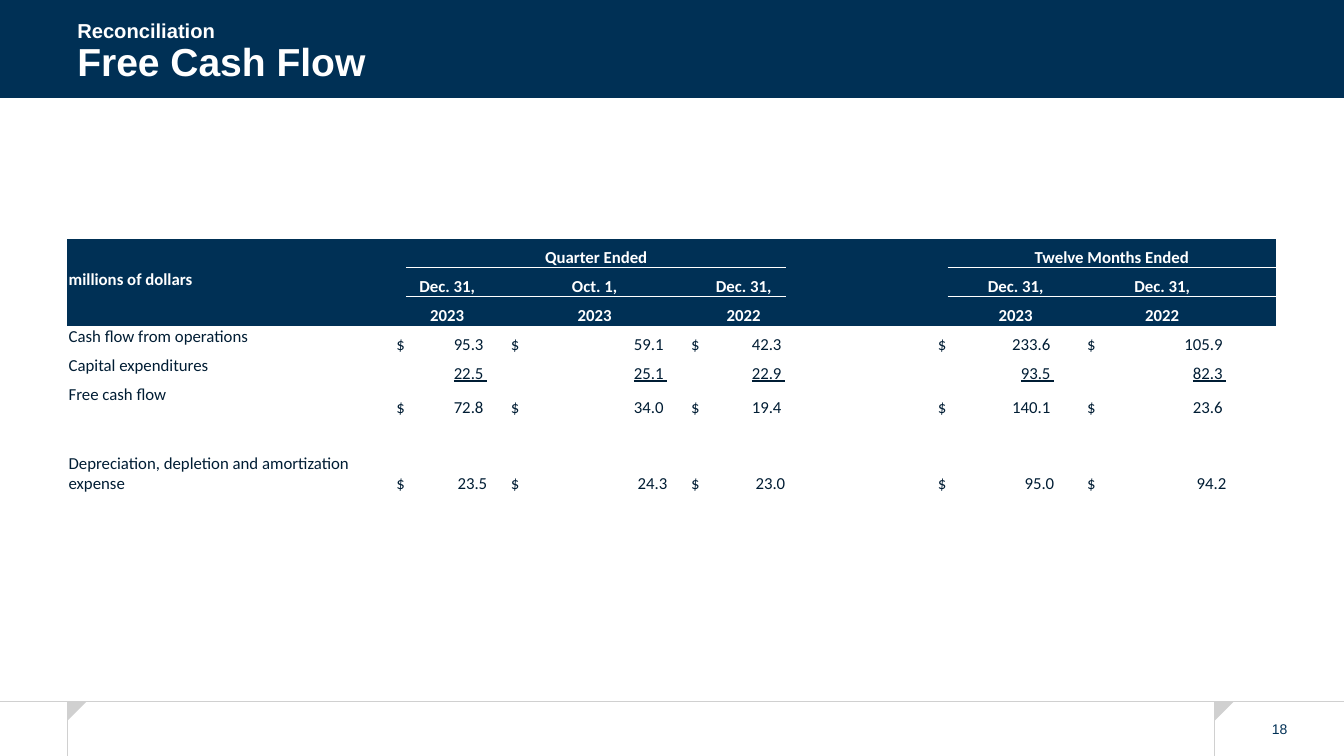
from dataclasses import dataclass

import lxml.etree
import pptx
import pptx.dml.color
import pptx.enum.shapes
import pptx.enum.text
import pptx.oxml.ns
import pptx.util

Cm = pptx.util.Cm
Pt = pptx.util.Pt
Color = pptx.dml.color.RGBColor
Align = pptx.enum.text.PP_ALIGN
Anchor = pptx.enum.text.MSO_ANCHOR
Shape = pptx.enum.shapes.MSO_SHAPE
qn = pptx.oxml.ns.qn


@dataclass(frozen=True)
class Theme:
    navy: Color = Color.from_string("003055")
    ink: Color = Color.from_string("001D34")
    white: Color = Color.from_string("FFFFFF")
    rule: Color = Color.from_string("D0D0D0")
    heading_font: str = "Arial"
    table_font: str = "Calibri"
    kicker_size: float = 14.4
    title_size: float = 27.9
    table_size: float = 12
    page_size: float = 10
    rule_width: float = 0.5
    header_rule_width: float = 1
    no_table_style: str = "{2D5ABB26-0587-4C30-8999-92F81FD0307C}"


@dataclass(frozen=True)
class Span:
    title: str
    first: int
    last: int


@dataclass(frozen=True)
class Period:
    day: str
    year: str
    dollar_column: int
    amount_column: int


@dataclass(frozen=True)
class Measure:
    row: int
    label: str
    amounts: tuple[str, ...]
    dollars: bool = True
    underlined: bool = False
    label_anchor: Anchor = Anchor.TOP


THEME = Theme()
SLIDE_WIDTH, SLIDE_HEIGHT = 33.87, 19.05
FOOTER_TOP = 17.68
FOOTER_DIVIDERS = (1.7, 30.61)
FLAG_SIZE = 0.48
HEADER_ROWS = 3
COLUMN_WIDTHS = (7.72, 0.81, 2.08, 0.81, 3.73, 0.81, 2.16,
                 2.08, 1.98, 0.71, 2.01, 1.04, 3.3, 1.22)
ROW_HEIGHTS = (0.73,) * 5 + (0.86, 0.66, 1.27)
SPANS = (Span("Quarter Ended", 2, 6), Span("Twelve Months Ended", 9, 13))
PERIODS = (
    Period("Dec. 31,", "2023", 1, 2),
    Period("Oct. 1,", "2023", 3, 4),
    Period("Dec. 31,", "2022", 5, 6),
    Period("Dec. 31,", "2023", 8, 10),
    Period("Dec. 31,", "2022", 11, 12),
)
MEASURES = (
    Measure(3, "Cash flow from operations",
            ("95.3 ", "59.1 ", "42.3 ", "233.6 ", "105.9 ")),
    Measure(4, "Capital expenditures",
            ("22.5 ", "25.1 ", "22.9 ", "93.5 ", "82.3 "),
            dollars=False, underlined=True),
    Measure(5, "Free cash flow",
            ("72.8 ", "34.0 ", "19.4 ", "140.1 ", "23.6 ")),
    Measure(7, "Depreciation, depletion and amortization expense",
            ("23.5", "24.3", "23.0", "95.0", "94.2"),
            label_anchor=Anchor.BOTTOM),
)


def style_text(paragraph, font_name: str, size: float, color: Color,
               bold: bool = False, underline: bool = False) -> None:
    for run in paragraph.runs:
        run.font.name = font_name
        run.font.size = Pt(size)
        run.font.color.rgb = color
        run.font.bold = bold
        run.font.underline = underline


def draw_solid(slide, kind: Shape, left: float, top: float, width: float,
               height: float, color: Color, rotation: float = 0) -> None:
    solid = slide.shapes.add_shape(kind, Cm(left), Cm(top), Cm(width), Cm(height))
    solid.rotation = rotation
    solid.shadow.inherit = False
    solid.fill.solid()
    solid.fill.fore_color.rgb = color
    solid.line.fill.background()


def draw_rule(slide, x1: float, y1: float, x2: float, y2: float) -> None:
    rule = slide.shapes.add_connector(
        pptx.enum.shapes.MSO_CONNECTOR.STRAIGHT, Cm(x1), Cm(y1), Cm(x2), Cm(y2))
    rule.line.color.rgb = THEME.rule
    rule.line.width = Pt(THEME.rule_width)
    lxml.etree.SubElement(rule._element.spPr, qn("a:effectLst"))


def add_text_frame(slide, left: float, top: float, width: float, height: float):
    frame = slide.shapes.add_textbox(
        Cm(left), Cm(top), Cm(width), Cm(height)).text_frame
    frame.word_wrap = True
    frame.vertical_anchor = Anchor.MIDDLE
    return frame


def draw_footer(slide) -> None:
    page = add_text_frame(slide, 31.55, 18.06, 1.4, 0.64)
    page.margin_left = page.margin_right = 0
    page.text = "18"
    page.paragraphs[0].alignment = Align.CENTER
    style_text(page.paragraphs[0], THEME.heading_font, THEME.page_size, THEME.navy)
    draw_rule(slide, 0, FOOTER_TOP, SLIDE_WIDTH, FOOTER_TOP)
    for divider in FOOTER_DIVIDERS:
        draw_rule(slide, divider, FOOTER_TOP, divider, SLIDE_HEIGHT)
        draw_solid(slide, Shape.RIGHT_TRIANGLE, divider, FOOTER_TOP,
                   FLAG_SIZE, FLAG_SIZE, THEME.rule, rotation=90)


def draw_title(slide) -> None:
    draw_solid(slide, Shape.RECTANGLE, 0, 0, SLIDE_WIDTH, 2.47, THEME.navy)
    title = add_text_frame(slide, 1.7, 0.61, 28.17, 1.45)
    title.text = "Reconciliation\nFree Cash Flow"
    for paragraph, size in zip(title.paragraphs, (THEME.kicker_size, THEME.title_size)):
        paragraph.line_spacing = 0.9
        style_text(paragraph, THEME.heading_font, size, THEME.white, bold=True)


def prepare_cell(cell, header: bool) -> None:
    cell.margin_left = cell.margin_right = cell.margin_top = Cm(0.03)
    cell.margin_bottom = 0
    if header:
        cell.fill.solid()
        cell.fill.fore_color.rgb = THEME.navy
    else:
        cell.fill.background()
    ending = lxml.etree.SubElement(
        cell.text_frame.paragraphs[0]._p, qn("a:endParaRPr"))
    ending.set("sz", str(THEME.table_size * 100))


def write_cell(cell, text: str, align: Align, anchor: Anchor = Anchor.BOTTOM,
               header: bool = False, underline: bool = False) -> None:
    paragraph = cell.text_frame.paragraphs[0]
    paragraph.text = text
    paragraph.alignment = align
    cell.vertical_anchor = anchor
    style_text(paragraph, THEME.table_font, THEME.table_size,
               THEME.white if header else THEME.ink, header, underline)


def add_border(cell, side: str) -> None:
    border = lxml.etree.Element(qn(side), w=str(Pt(THEME.header_rule_width)))
    fill = lxml.etree.SubElement(border, qn("a:solidFill"))
    lxml.etree.SubElement(fill, qn("a:srgbClr"), val=str(THEME.white))
    cell._tc.get_or_add_tcPr().insert(0, border)


def draw_cash_flow_table(slide) -> None:
    table = slide.shapes.add_table(
        len(ROW_HEIGHTS), len(COLUMN_WIDTHS), Cm(1.7), Cm(6.02),
        Cm(sum(COLUMN_WIDTHS)), Cm(sum(ROW_HEIGHTS))).table
    table.first_row = table.horz_banding = False
    table._tbl.tblPr[0].text = THEME.no_table_style
    for column, width in zip(table.columns, COLUMN_WIDTHS):
        column.width = Cm(width)
    for index, (row, height) in enumerate(zip(table.rows, ROW_HEIGHTS)):
        row.height = Cm(height)
        for cell in row.cells:
            prepare_cell(cell, index < HEADER_ROWS)
    for span in SPANS:
        for column in range(span.first, span.last + 1):
            add_border(table.cell(0, column), "a:lnB")
            add_border(table.cell(1, column), "a:lnT")
        table.cell(0, span.first).merge(table.cell(0, span.last))
        write_cell(table.cell(0, span.first), span.title, Align.CENTER, header=True)
    write_cell(table.cell(1, 0), "millions of dollars", Align.LEFT, Anchor.TOP, header=True)
    for period in PERIODS:
        for row, text in enumerate((period.day, period.year), start=1):
            write_cell(table.cell(row, period.amount_column), text, Align.CENTER, header=True)
    for measure in MEASURES:
        write_cell(table.cell(measure.row, 0), measure.label, Align.LEFT, measure.label_anchor)
        for period, amount in zip(PERIODS, measure.amounts):
            if measure.dollars:
                write_cell(table.cell(measure.row, period.dollar_column), "$", Align.RIGHT)
            write_cell(table.cell(measure.row, period.amount_column), amount,
                       Align.RIGHT, underline=measure.underlined)


def main() -> None:
    presentation = pptx.Presentation()
    presentation.slide_width = Cm(SLIDE_WIDTH)
    presentation.slide_height = Cm(SLIDE_HEIGHT)
    slide = presentation.slides.add_slide(presentation.slide_layouts[6])
    draw_footer(slide)
    draw_title(slide)
    draw_cash_flow_table(slide)
    presentation.save("out.pptx")


if __name__ == "__main__":
    main()
